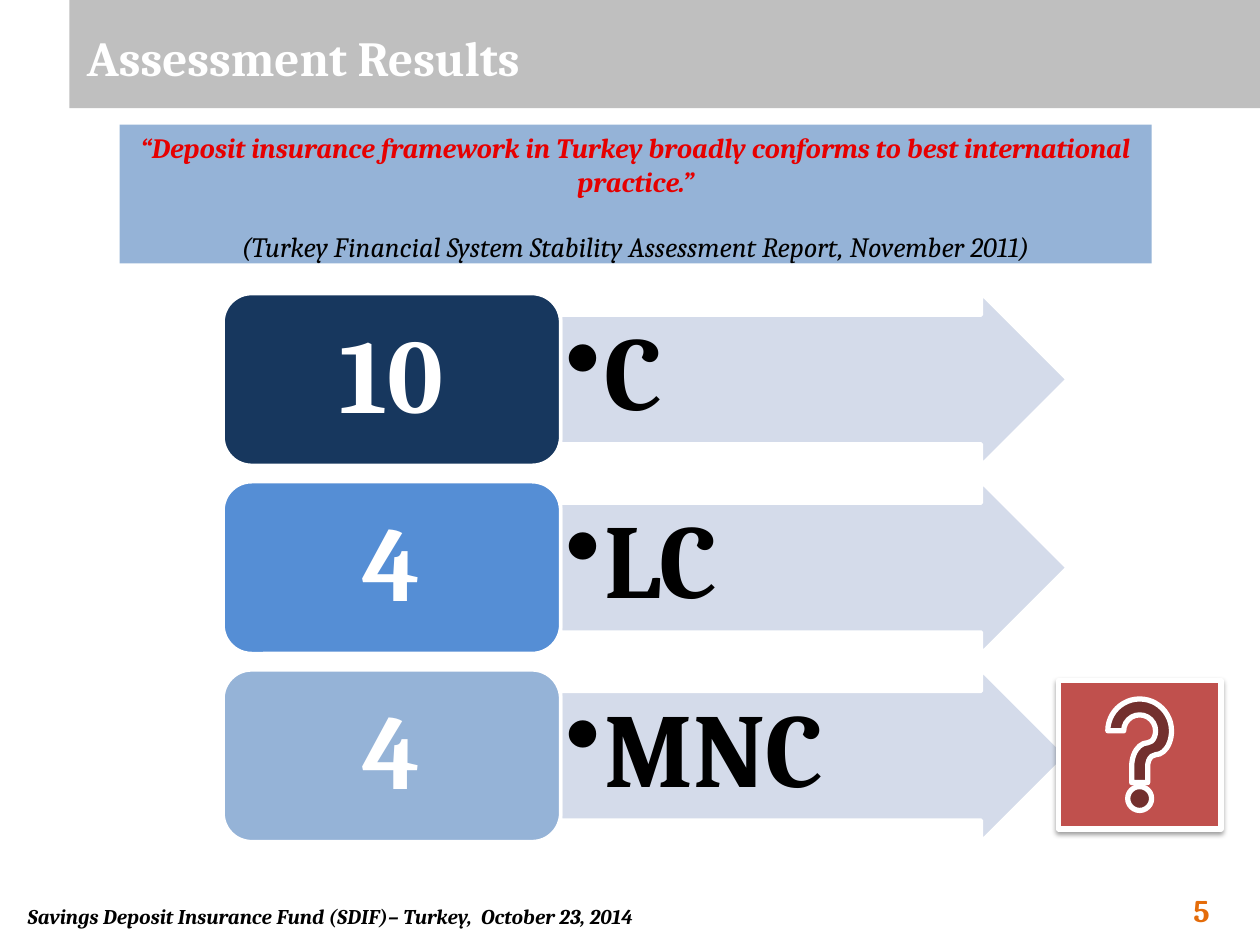
from collections import namedtuple
from dataclasses import dataclass

from lxml import etree
from pptx import Presentation
from pptx.dml.color import RGBColor
from pptx.enum.shapes import MSO_SHAPE
from pptx.enum.text import MSO_ANCHOR, PP_ALIGN
from pptx.oxml import parse_xml
from pptx.oxml.ns import nsdecls, qn
from pptx.util import Inches, Pt

RECT, ROUND = MSO_SHAPE.RECTANGLE, MSO_SHAPE.ROUNDED_RECTANGLE
ARROW, HELP = MSO_SHAPE.RIGHT_ARROW, MSO_SHAPE.ACTION_BUTTON_HELP
LEFT, CENTER, RIGHT = PP_ALIGN.LEFT, PP_ALIGN.CENTER, PP_ALIGN.RIGHT
TOP, MIDDLE = MSO_ANCHOR.TOP, MSO_ANCHOR.MIDDLE

Box = namedtuple("Box", "x y w h")
WIDTH, HEIGHT = 10, 7.5


@dataclass(frozen=True)
class Theme:
    """Colours, font and type sizes of the slide."""
    font: str = "Cambria"
    white: str = "FFFFFF"
    black: str = "000000"
    band: str = "BFBFBF"
    pale: str = "D0D8E8"
    navy: str = "17375E"
    blue: str = "558ED5"
    light: str = "95B3D7"
    quote: str = "E60000"
    help: str = "C0504D"
    number: str = "E46C0A"
    title_size: int = 28
    score_size: int = 60
    quote_size: int = 16
    page_size: int = 18
    footer_size: int = 12


T = Theme()


def emu(box):
    """Turn a box in inches into four lengths."""
    return [Inches(v) for v in box]


def frame(tf, anchor=TOP, inset=(0.1, 0.05)):
    """Set wrapping, anchor and insets of a text frame."""
    tf.word_wrap = True
    tf.vertical_anchor = anchor
    tf.margin_left = tf.margin_right = Inches(inset[0])
    tf.margin_top = tf.margin_bottom = Inches(inset[1])
    return tf


def write(p, text, size, color, align=LEFT, bold=True, italic=False,
          spacing=None, before=None, bullet=None):
    """Fill one paragraph with formatted text."""
    if bullet:
        pPr = p._p.get_or_add_pPr()
        pPr.set("marL", str(Inches(bullet)))
        pPr.set("indent", str(-Inches(bullet)))
        etree.SubElement(pPr, qn("a:buChar")).set("char", "•")
    p.alignment, p.line_spacing = align, spacing
    if before:
        p.space_before = Pt(before)
    r = p.add_run()
    r.text = text
    f = r.font
    f.name, f.size, f.bold, f.italic = T.font, Pt(size), bold, italic
    f.color.rgb = RGBColor.from_string(color)


def add_box(s, kind, box, fill, line=0):
    """Add a flat preset shape, with a white outline where asked."""
    sp = s.shapes.add_shape(kind, *emu(box))
    sp.shadow.inherit = False
    sp.fill.solid()
    sp.fill.fore_color.rgb = RGBColor.from_string(fill)
    if line:
        sp.line.color.rgb = RGBColor.from_string(T.white)
        sp.line.width = Pt(line)
    else:
        sp.line.fill.background()
    return sp


def add_title(s, box, text):
    """Place the title over its grey band."""
    title = s.shapes.title
    band = add_box(s, RECT, box, T.band)
    title.element.addprevious(band.element)
    title.left, title.top, title.width, title.height = emu(
        Box(box.x + 0.04, 0, 8.75, 0.9))
    tf = frame(title.text_frame, MIDDLE)
    write(tf.paragraphs[0], text, T.title_size, T.white)


def add_quote(s, box, quote, citation):
    """Place the quotation and its citation on a blue panel."""
    tf = frame(add_box(s, RECT, box, T.light).text_frame)
    write(tf.paragraphs[0], quote, T.quote_size, T.quote, CENTER, italic=True)
    write(tf.add_paragraph(), citation, T.quote_size, T.black, CENTER,
          bold=False, italic=True, before=18)


def add_score(s, box, count, grade, color):
    """Place one count tile and the arrow naming its grade."""
    split = 0.4 * box.w
    arrow = add_box(s, ARROW, Box(box.x + split, box.y, box.w - split, box.h),
                    T.pale, 2)
    arrow.adjustments[0], arrow.adjustments[1] = 0.75, 0.5
    clr = arrow.element.spPr.find(qn("a:solidFill"))[0]
    etree.SubElement(clr, qn("a:alpha")).set("val", "90000")
    tf = frame(arrow.text_frame, inset=(0.04, 0.04))
    write(tf.paragraphs[0], grade, T.score_size, T.black, spacing=0.9,
          bullet=0.31)
    tile = add_box(s, ROUND, Box(box.x, box.y, split, box.h), color, 2)
    tf = frame(tile.text_frame, MIDDLE, (0.25, 0.12))
    write(tf.paragraphs[0], count, T.score_size, T.white, CENTER, spacing=0.9)


def add_scores(s, box, rows, gap):
    """Stack the score rows evenly in the box."""
    h = (box.h - gap * (len(rows) - 1)) / len(rows)
    for i, row in enumerate(rows):
        add_score(s, Box(box.x, box.y + i * (h + gap), box.w, h), *row)


def add_help(s, box):
    """Place the question mark button with its soft shadow."""
    sp = add_box(s, HELP, box, T.help, 3)
    effects = sp.element.spPr.find(qn("a:effectLst"))
    effects.append(parse_xml(
        f'<a:outerShdw {nsdecls("a")} blurRad="{Pt(3.1)}" dist="{Pt(1.6)}" '
        f'dir="5400000" rotWithShape="0"><a:srgbClr val="{T.black}">'
        '<a:alpha val="38000"/></a:srgbClr></a:outerShdw>'))


def add_label(s, box, text, size, color, anchor=TOP, **fmt):
    """Add a text box holding one line."""
    tf = frame(s.shapes.add_textbox(*emu(box)).text_frame, anchor)
    write(tf.paragraphs[0], text, size, color, **fmt)


def main():
    """Build the slide and save it."""
    prs = Presentation()
    prs.slide_width, prs.slide_height = Inches(WIDTH), Inches(HEIGHT)
    s = prs.slides.add_slide(prs.slide_layouts[5])
    add_title(s, Box(0.55, 0, WIDTH - 0.55, 0.86), "Assessment Results")
    add_scores(s, Box(1.77, 2.33, 6.7, 4.35), [
        ("10", "C", T.navy), ("4", "LC", T.blue), ("4", "MNC", T.light)], 0.13)
    add_help(s, Box(8.4, 5.4, 1.29, 1.18))
    add_quote(s, Box(0.95, 0.99, 8.19, 1.1),
              "“Deposit insurance framework in Turkey broadly conforms to "
              "best international practice.”",
              "(Turkey Financial System Stability Assessment Report, "
              "November 2011)")
    add_label(s, Box(7.53, 7.08, 2.17, 0.29), "5", T.page_size, T.number,
              MIDDLE, align=RIGHT)
    add_label(s, Box(0.12, 7.12, 5.91, 0.3),
              "Savings Deposit Insurance Fund (SDIF)– Turkey,  "
              "October 23, 2014", T.footer_size, T.black, italic=True)
    prs.save("out.pptx")


if __name__ == "__main__":
    main()
